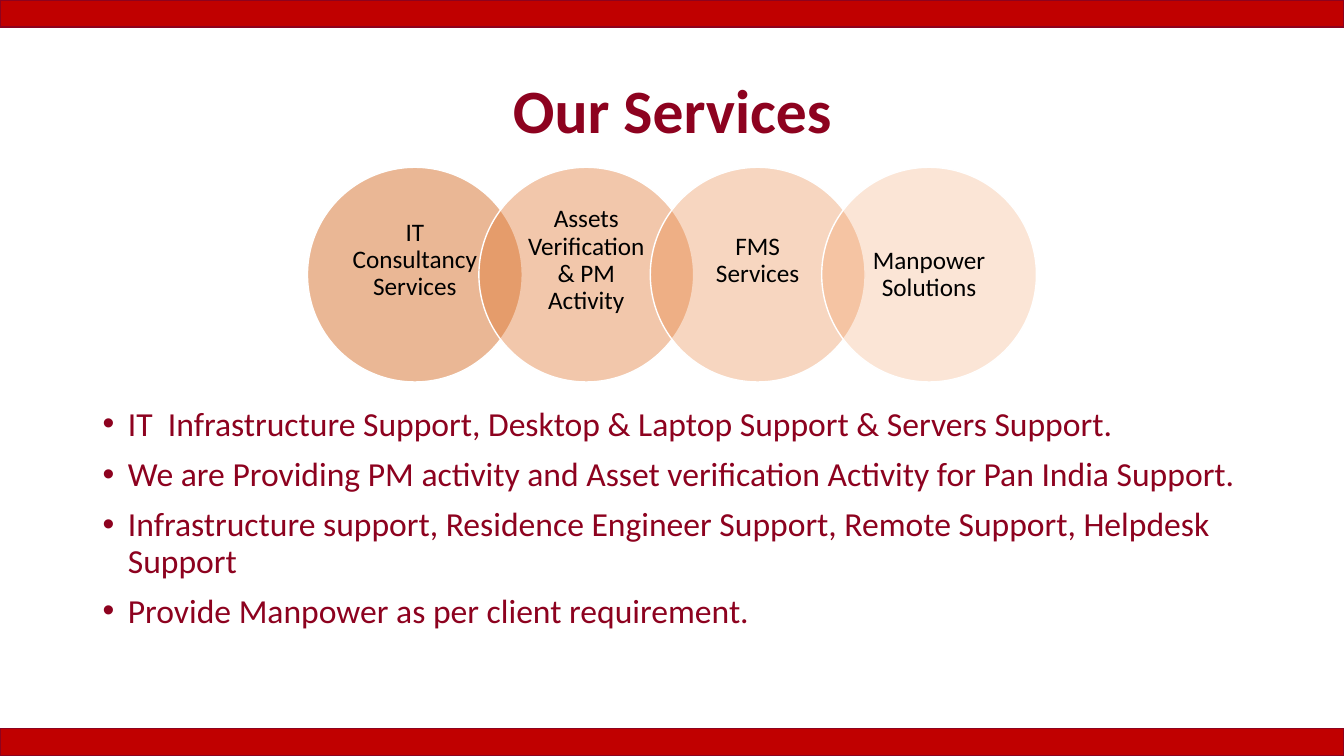
from lxml import etree
from pptx import Presentation
from pptx.dml.color import RGBColor
from pptx.enum.shapes import MSO_SHAPE as Shape
from pptx.enum.text import MSO_ANCHOR as Anchor, PP_ALIGN as Align
from pptx.oxml.ns import qn
from pptx.util import Inches, Pt

# Content
TITLE = "Our Services"
# label, circle colour, opacity in percent, bottom inset of the label
SERVICES = [
    ("IT Consultancy Services", RGBColor(0xD7, 0x71, 0x2C), 50, 0.31),
    ("Assets Verification & PM Activity", RGBColor(0xDF, 0x75, 0x2E), 40, 0.31),
    ("FMS Services", RGBColor(0xE6, 0x7A, 0x30), 30, 0.31),
    ("Manpower Solutions", RGBColor(0xED, 0x7E, 0x32), 20, 0.03),
]
BULLETS = [
    "IT  Infrastructure Support, Desktop & Laptop Support & Servers Support.",
    "We are Providing PM activity and Asset verification Activity for Pan India Support.",
    "Infrastructure support, Residence Engineer Support, Remote Support, Helpdesk Support",
    "Provide Manpower as per client requirement.",
]

# Style and layout
FONT = "Calibri"
MAROON = RGBColor(0x8D, 0x02, 0x1F)
RED = RGBColor(0xC0, 0x00, 0x00)
WHITE = RGBColor(0xFF, 0xFF, 0xFF)
BLACK = RGBColor(0x00, 0x00, 0x00)
WIDTH, HEIGHT, BAND = 13.33, 7.5, 0.27
MARGIN, CONTENT_WIDTH = 0.92, 11.5
CIRCLE_LEFT, CIRCLE_TOP, DIAMETER, PITCH = 3.05, 1.66, 2.13, 1.7
LABEL_SIZE = 1.5


def style(paragraph, size, color, bold=False):
    paragraph.line_spacing = 0.9
    font = paragraph.font
    font.name, font.size, font.bold = FONT, Pt(size), bold
    font.color.rgb = color


def add_filled(slide, kind, box, fill, line):
    shape = slide.shapes.add_shape(kind, *map(Inches, box))
    shape.shadow.inherit = False
    shape.fill.solid()
    shape.fill.fore_color.rgb = fill
    shape.line.color.rgb = line
    shape.line.width = Pt(1)
    return shape


def set_opacity(shape, percent):
    color = shape.fill._xPr.find(qn("a:solidFill"))[0]
    etree.SubElement(color, qn("a:alpha"), val=str(percent * 1000))


def add_text_frame(slide, box):
    frame = slide.shapes.add_textbox(*map(Inches, box)).text_frame
    frame.word_wrap = True
    return frame


def add_bullet(paragraph):
    properties = paragraph._p.get_or_add_pPr()
    properties.set("marL", str(Inches(0.25)))
    properties.set("indent", str(Inches(-0.25)))
    etree.SubElement(properties, qn("a:buFont"), typeface="Arial")
    etree.SubElement(properties, qn("a:buChar"), char="•")


presentation = Presentation()
presentation.slide_width, presentation.slide_height = Inches(WIDTH), Inches(HEIGHT)
slide = presentation.slides.add_slide(presentation.slide_layouts[5])

# Title
title = slide.shapes.title
title.left, title.top = Inches(MARGIN), Inches(0.4)
title.width, title.height = Inches(CONTENT_WIDTH), Inches(1.45)
title.text_frame.text = TITLE
title.text_frame.vertical_anchor = Anchor.MIDDLE
heading = title.text_frame.paragraphs[0]
heading.alignment = Align.CENTER
style(heading, 44, MAROON, bold=True)

# Overlapping service circles
inset = (DIAMETER - LABEL_SIZE) / 2
for index, (label, color, opacity, bottom) in enumerate(SERVICES):
    left = CIRCLE_LEFT + index * PITCH
    circle = add_filled(slide, Shape.OVAL, (left, CIRCLE_TOP, DIAMETER, DIAMETER), color, WHITE)
    set_opacity(circle, opacity)
    frame = add_text_frame(slide, (left + inset, CIRCLE_TOP + inset, LABEL_SIZE, LABEL_SIZE))
    frame.margin_left = frame.margin_right = Inches(0.12)
    frame.margin_top, frame.margin_bottom = Inches(0.03), Inches(bottom)
    frame.vertical_anchor = Anchor.MIDDLE
    frame.text = label
    frame.paragraphs[0].alignment = Align.CENTER
    style(frame.paragraphs[0], 18, BLACK)

# Bullet list
frame = add_text_frame(slide, (MARGIN, 3.99, CONTENT_WIDTH, 2.77))
frame.text = "\n".join(BULLETS)
for paragraph in frame.paragraphs:
    style(paragraph, 24, MAROON)
    paragraph.space_before = Pt(10)
    add_bullet(paragraph)
    # Bullet elements belong before the default run properties
    properties = paragraph._p.pPr
    properties.append(properties.find(qn("a:defRPr")))

# Bands at the top and bottom edges
for top in (0, HEIGHT - BAND):
    add_filled(slide, Shape.RECTANGLE, (0, top, WIDTH, BAND), RED, MAROON)

presentation.save("out.pptx")
